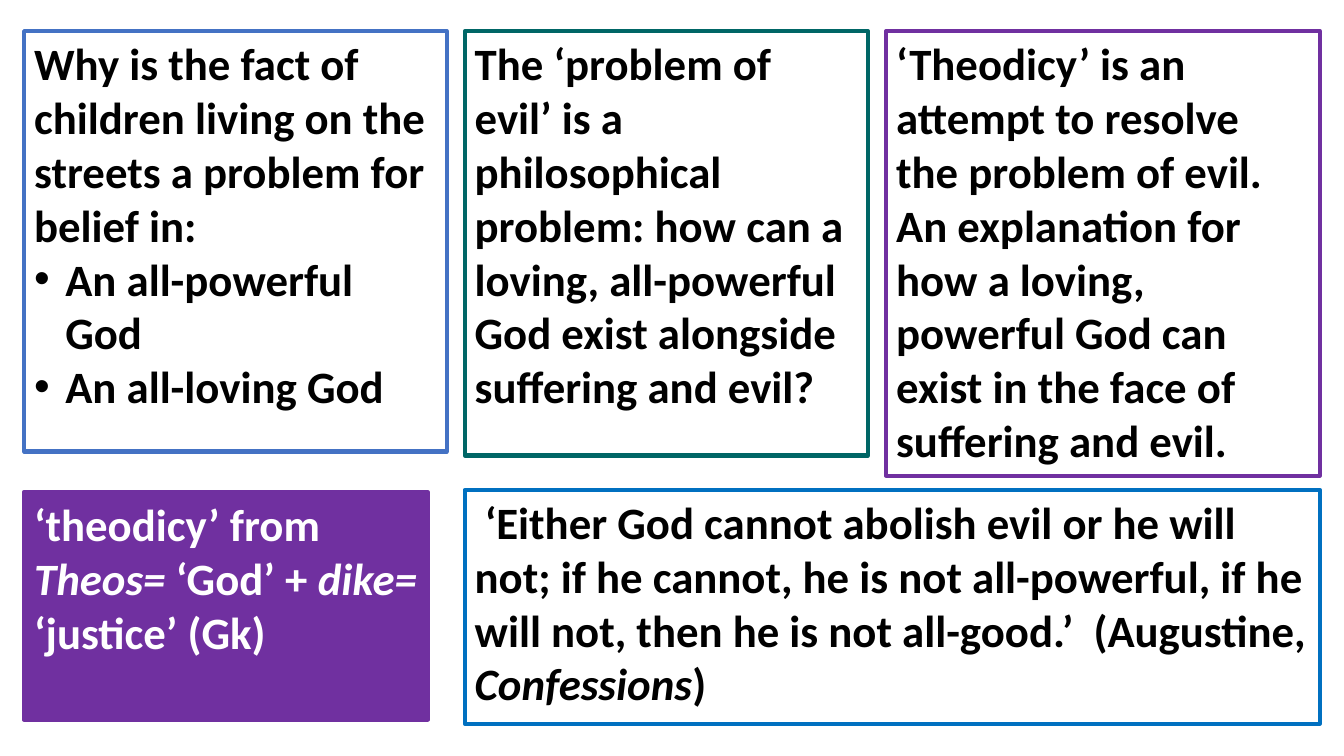
from lxml.etree import SubElement
from pptx import Presentation
from pptx.dml.color import RGBColor
from pptx.enum.text import MSO_ANCHOR, MSO_AUTO_SIZE, PP_ALIGN
from pptx.oxml.ns import qn
from pptx.util import Inches, Pt

FONT, TEXT_SIZE, BORDER_WIDTH = "Calibri", 32, 3
BLACK, WHITE, PURPLE = "000000", "FFFFFF", "7030A0"
LEFT, MIDDLE, RIGHT, RIGHT_EDGE = 0.24, 4.61, 8.79, 13.09
TOP = 0.31
BULLET_INDENT = 0.31

question = [
    ("Why is the fact of children living on the streets a problem for belief in:",),
]
beliefs = [("An all-powerful God",), ("An all-loving God",)]
problem = [
    ("The ‘problem of evil’ is a philosophical problem: how can a loving, "
     "all-powerful God exist alongside suffering and evil?",),
]
theodicy = [
    ("‘Theodicy’ is an attempt to resolve the problem of evil. An explanation for "
     "how a loving, powerful God can exist in the face of suffering and evil.",),
]
quotation = [
    (" ‘Either God cannot abolish evil or he will not; if he cannot, he is not "
     "all-powerful, if he will not, then he is not all-good.’  (Augustine, ",
     "Confessions", ")"),
]
etymology = [("‘theodicy’ from ", "Theos= ", "‘God’ + ", "dike= ", "‘justice’ (Gk)")]

panels = [
    (question, beliefs, (LEFT, TOP, 4.19, 4.17), "4472C4", None, BLACK),
    (problem, [], (MIDDLE, TOP, 4, 4.21), "006666", None, BLACK),
    (theodicy, [], (RIGHT, TOP, RIGHT_EDGE - RIGHT, 4.41), PURPLE, None, BLACK),
    (quotation, [], (MIDDLE, 4.86, RIGHT_EDGE - MIDDLE, 2.32), "0070C0", None, BLACK),
    (etymology, [], (LEFT, 4.88, 4, 2.26), PURPLE, PURPLE, WHITE),
]


def color(value):
    return RGBColor.from_string(value)


def add_bullet(paragraph):
    properties = paragraph._p.get_or_add_pPr()
    properties.set("marL", str(Inches(BULLET_INDENT)))
    properties.set("indent", str(-Inches(BULLET_INDENT)))
    SubElement(properties, qn("a:buFont")).set("typeface", "Arial")
    SubElement(properties, qn("a:buChar")).set("char", "•")


def write_paragraph(paragraph, pieces, text_color):
    paragraph.alignment = PP_ALIGN.LEFT
    for position, piece in enumerate(pieces):
        run = paragraph.add_run()
        run.text = piece
        run.font.name = FONT
        run.font.size = Pt(TEXT_SIZE)
        run.font.bold = True
        run.font.italic = position % 2 == 1
        run.font.color.rgb = color(text_color)


def add_panel(slide, statements, bullets, box, border, fill, text_color):
    panel = slide.shapes.add_textbox(*map(Inches, box))
    panel.line.color.rgb = color(border)
    panel.line.width = Pt(BORDER_WIDTH)
    if fill:
        panel.fill.solid()
        panel.fill.fore_color.rgb = color(fill)
    frame = panel.text_frame
    frame.word_wrap = True
    frame.auto_size = MSO_AUTO_SIZE.NONE
    frame.vertical_anchor = MSO_ANCHOR.TOP
    for position, pieces in enumerate(statements + bullets):
        paragraph = frame.add_paragraph() if position else frame.paragraphs[0]
        write_paragraph(paragraph, pieces, text_color)
        if position >= len(statements):
            add_bullet(paragraph)


def main():
    deck = Presentation()
    deck.slide_width, deck.slide_height = Inches(13.33), Inches(7.5)
    slide = deck.slides.add_slide(deck.slide_layouts[6])
    for panel in panels:
        add_panel(slide, *panel)
    deck.save("out.pptx")


if __name__ == "__main__":
    main()
